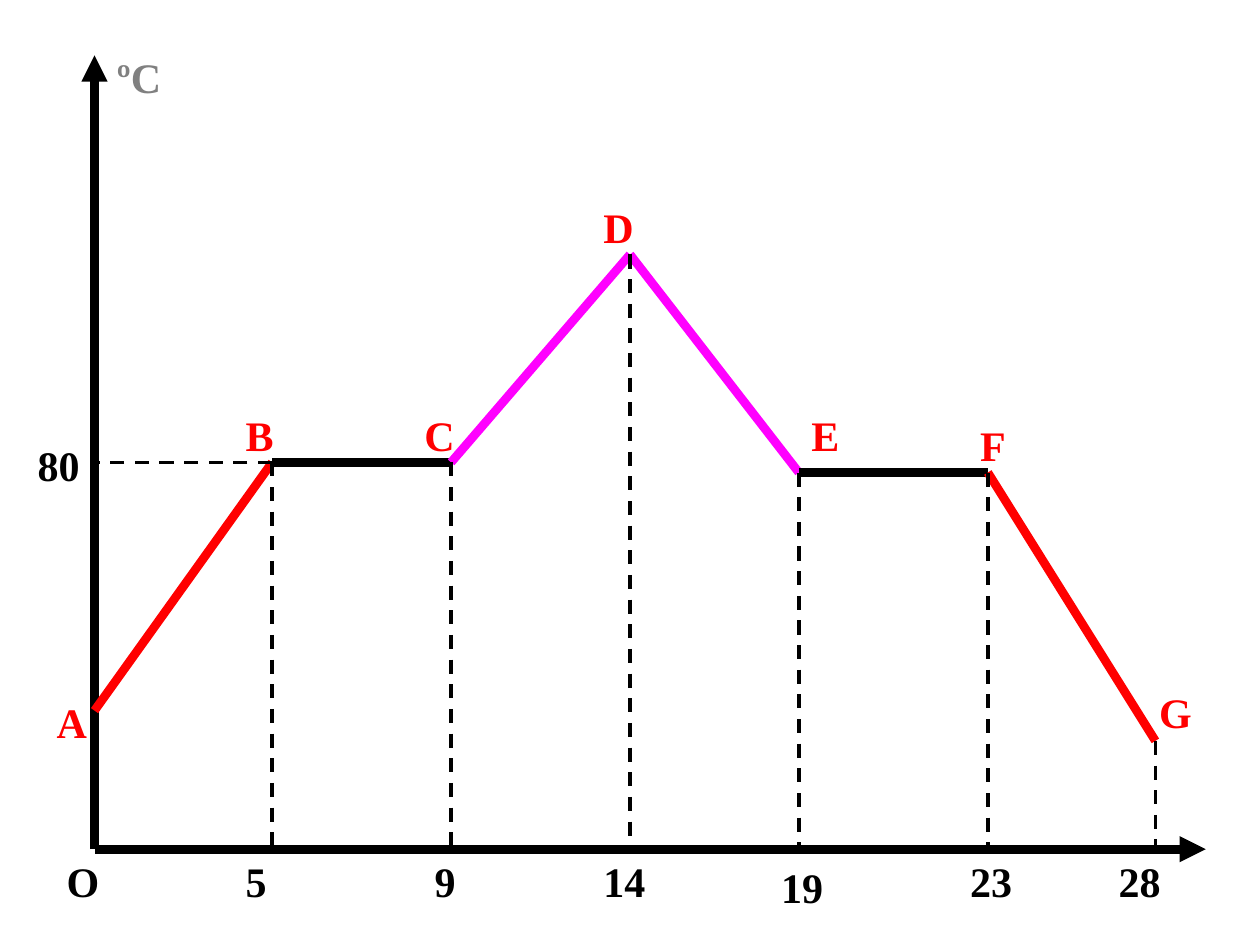
from typing import NamedTuple

from lxml import etree
from pptx import Presentation
from pptx.dml.color import RGBColor
from pptx.enum import dml, shapes, text
from pptx.oxml import ns
from pptx.util import Inches, Pt

BLACK, RED, PINK, GRAY = "000000", "FF0000", "FF00FF", "808080"
LEFT, BASE = 0.75, 6.74


class Point(NamedTuple):
    x: float
    y: float


class Label(NamedTuple):
    words: str
    x: float
    y: float
    color: str = BLACK


A, B, C, D = Point(LEFT, 5.64), Point(2.16, 3.67), Point(3.58, 3.67), Point(5, 2.02)
E, F, G = Point(6.34, 3.75), Point(7.84, 3.75), Point(9.17, 5.88)
CURVE = [A, B, C, D, E, F, G]
COLORS = [RED, BLACK, PINK, PINK, BLACK, RED]
ORIGIN = Point(LEFT, BASE)

LABELS = [
    Label("80", 0.2, 3.44),
    Label("ºC", 0.83, 0.36, GRAY),
    Label("O", 0.43, BASE),
    Label("5", 1.85, BASE),
    Label("9", 3.35, BASE),
    Label("14", 4.69, BASE),
    Label("19", 6.1, 6.79),
    Label("23", 7.6, BASE),
    Label("28", 8.78, BASE),
    Label("A", 0.35, 5.48, RED),
    Label("B", 1.85, 3.2, RED),
    Label("C", 3.27, 3.2, RED),
    Label("D", 4.69, 1.55, RED),
    Label("E", 6.34, 3.2, RED),
    Label("F", 7.68, 3.28, RED),
    Label("G", 9.1, 5.4, RED),
]


def paint(target, color: str) -> None:
    target.rgb = RGBColor.from_string(color)


def draw_line(slide, start: Point, end: Point, color: str = BLACK,
              width: float = 5, dash: bool = False, arrow: bool = False) -> None:
    line = slide.shapes.add_connector(
        shapes.MSO_CONNECTOR.STRAIGHT,
        *(Inches(n) for n in (*start, *end)))
    line.line.width = Pt(width)
    line.line.fill.solid()
    paint(line.line.fill.fore_color, color)
    if dash:
        line.line.dash_style = dml.MSO_LINE.DASH
    if arrow:
        tail = etree.SubElement(line.line._get_or_add_ln(), ns.qn("a:tailEnd"))
        tail.set("type", "triangle")
    etree.SubElement(line._element.spPr, ns.qn("a:effectLst"))


def draw_label(slide, label: Label) -> None:
    box = slide.shapes.add_textbox(
        Inches(label.x), Inches(label.y), Inches(0.71), Inches(0.5))
    frame = box.text_frame
    frame.word_wrap = True
    frame.auto_size = text.MSO_AUTO_SIZE.SHAPE_TO_FIT_TEXT
    frame.text = label.words
    font = frame.paragraphs[0].runs[0].font
    font.name, font.size, font.bold = "Times New Roman", Pt(24), True
    paint(font.color, label.color)


def main() -> None:
    deck = Presentation()
    deck.slide_width, deck.slide_height = Inches(10), Inches(7.5)
    slide = deck.slides.add_slide(deck.slide_layouts[6])

    for tip in (Point(9.57, BASE), Point(LEFT, 0.44)):
        draw_line(slide, ORIGIN, tip, arrow=True)
    for start, end, color in zip(CURVE, CURVE[1:], COLORS):
        draw_line(slide, start, end, color)
    draw_line(slide, B, Point(LEFT, B.y), width=2, dash=True)
    for point in CURVE[1:]:
        draw_line(slide, point, Point(point.x, BASE), width=2, dash=True)
    for label in LABELS:
        draw_label(slide, label)

    deck.save("out.pptx")


if __name__ == "__main__":
    main()
